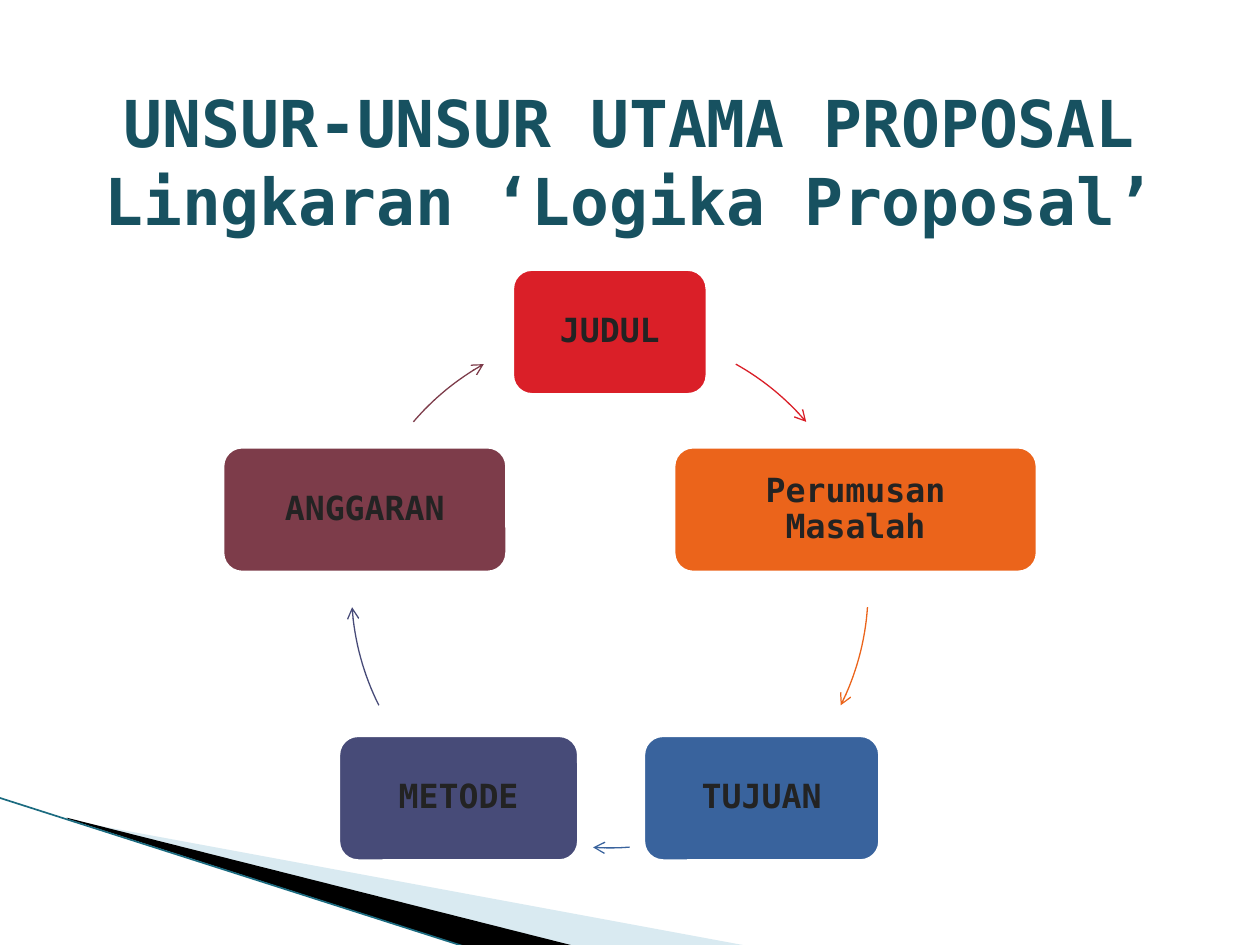
from math import cos, radians, sin

from lxml.etree import SubElement
from pptx import Presentation
from pptx.dml.color import RGBColor
from pptx.enum.shapes import MSO_CONNECTOR as Connector, MSO_SHAPE as Shape
from pptx.enum.text import MSO_ANCHOR as Anchor, PP_ALIGN as Align
from pptx.oxml.ns import qn
from pptx.util import Inches, Pt

COLORS = {
    "title": "175160", "label": "232323", "white": "FFFFFF", "black": "000000",
    "pale": "A0CBDC", "teal": "1B6B80", "red": "DA1F28", "orange": "EB641B",
    "blue": "39639D", "indigo": "474B78", "maroon": "7D3C4A",
}
FONT = "DejaVu Sans Mono"
CENTER_X, CENTER_Y, RADIUS = 4.84, 4.68, 2.05
CIRCLE_FRAME = (CENTER_X - RADIUS, CENTER_Y - RADIUS, 2 * RADIUS, 2 * RADIUS)
BOX_HEIGHT = 1.03

# label, color, left, top, width, start and end angle of the arrow that follows
STEPS = [
    ("JUDUL", "red", 4.05, 2.12, 1.58, -60.8, -40.5),
    ("Perumusan Masalah", "orange", 5.33, 3.53, 2.92, 3.9, 26.6),
    ("TUJUAN", "blue", 5.09, 5.82, 1.91, 85.6, 93.7),
    ("METODE", "indigo", 2.67, 5.82, 1.94, 153.4, 176.1),
    ("ANGGARAN", "maroon", 1.75, 3.53, 2.29, 220.5, 240.8),
]


def rgb(name):
    return RGBColor.from_string(COLORS[name])


def write_text(shape, text, size, color, inset=0.1, line_spacing=1.0):
    frame = shape.text_frame
    frame.word_wrap = True
    frame.vertical_anchor = Anchor.MIDDLE
    frame.margin_left = frame.margin_right = Inches(inset)
    frame.margin_top = frame.margin_bottom = Inches(inset)
    paragraph = frame.paragraphs[0]
    paragraph.text = text
    paragraph.alignment = Align.CENTER
    paragraph.line_spacing = line_spacing
    font = paragraph.font
    font.name, font.size, font.bold = FONT, Pt(size), True
    font.color.rgb = rgb(color)


def set_frame(shape, frame):
    """Give a freeform another frame while its points stay where they are."""
    left, top, width, height = map(Inches, frame)
    shift_x, shift_y = shape.left - left, shape.top - top
    for outline in shape._element.iter(qn("a:path")):
        outline.set("w", str(width))
        outline.set("h", str(height))
        for point in outline.iter(qn("a:pt")):
            point.set("x", str(int(point.get("x")) + shift_x))
            point.set("y", str(int(point.get("y")) + shift_y))
    shape.left, shape.top, shape.width, shape.height = left, top, width, height


class SlideBuilder:
    """Holds the current slide and draws its kinds of element."""

    def __init__(self, slide):
        self.slide = slide

    def title(self, text, left, top, width, height):
        box = self.slide.shapes.add_textbox(*map(Inches, (left, top, width, height)))
        write_text(box, text, 36.9, "title")

    def box(self, text, color, left, top, width):
        shape = self.slide.shapes.add_shape(
            Shape.ROUNDED_RECTANGLE, *map(Inches, (left, top, width, BOX_HEIGHT)))
        shape.shadow.inherit = False
        shape.fill.solid()
        shape.fill.fore_color.rgb = rgb(color)
        shape.line.color.rgb = rgb("white")
        shape.line.width = Pt(4.33)
        write_text(shape, text, 19, "label", inset=0.13, line_spacing=0.9)

    def outline(self, points, frame, close):
        start, *rest = [(Inches(x), Inches(y)) for x, y in points]
        builder = self.slide.shapes.build_freeform(*start)
        builder.add_line_segments(rest, close=close)
        shape = builder.convert_to_shape()
        shape.shadow.inherit = False
        set_frame(shape, frame)
        return shape

    def wedge(self, points, frame, color, opacity=100):
        shape = self.outline(points, frame, close=True)
        shape.fill.solid()
        shape.fill.fore_color.rgb = rgb(color)
        shape.line.fill.background()
        color_element = shape.fill._xPr.find(qn("a:solidFill"))[0]
        SubElement(color_element, qn("a:alpha"), val=str(opacity * 1000))

    def arc_arrow(self, start, end, color, segments=16):
        """Follow the circle clockwise between two angles in degrees."""
        angles = [radians(start + (end - start) * i / segments)
                  for i in range(segments + 1)]
        points = [(CENTER_X + RADIUS * cos(angle), CENTER_Y + RADIUS * sin(angle))
                  for angle in angles]
        shape = self.outline(points, CIRCLE_FRAME, close=False)
        shape.fill.background()
        shape.line.color.rgb = rgb(color)
        shape.line.width = Pt(0.75)
        SubElement(shape.line._get_or_add_ln(), qn("a:tailEnd"),
                   type="arrow", w="med", len="med")

    def line(self, start, end, color, width):
        connector = self.slide.shapes.add_connector(
            Connector.STRAIGHT, *map(Inches, (*start, *end)))
        connector.line.color.rgb = rgb(color)
        connector.line.width = Pt(width)
        SubElement(connector._element.spPr, qn("a:effectLst"))


def main():
    presentation = Presentation()
    presentation.slide_width, presentation.slide_height = Inches(10), Inches(7.5)
    slide = presentation.slides.add_slide(presentation.slide_layouts[6])
    builder = SlideBuilder(slide)

    builder.wedge([(0.55, 6.51), (5.95, 7.51), (4.56, 7.51), (0.55, 6.5)],
                  (0.78, 5.47, 4.16, 1.58), "pale", opacity=40)
    builder.wedge([(0.53, 6.49), (4.57, 7.51), (3.72, 7.52), (0.54, 6.5)],
                  (-0.06, 6.33, 4.16, 0.92), "black")
    builder.line((-0.01, 6.33), (3.71, 7.52), "teal", 0.95)

    builder.title("UNSUR-UNSUR UTAMA PROPOSAL\vLingkaran ‘Logika Proposal’",
                  0.5, 0.91, 9, 0.73)
    for label, color, left, top, width, start, end in STEPS:
        builder.box(label, color, left, top, width)
        builder.arc_arrow(start, end, color)

    presentation.save("out.pptx")


if __name__ == "__main__":
    main()
